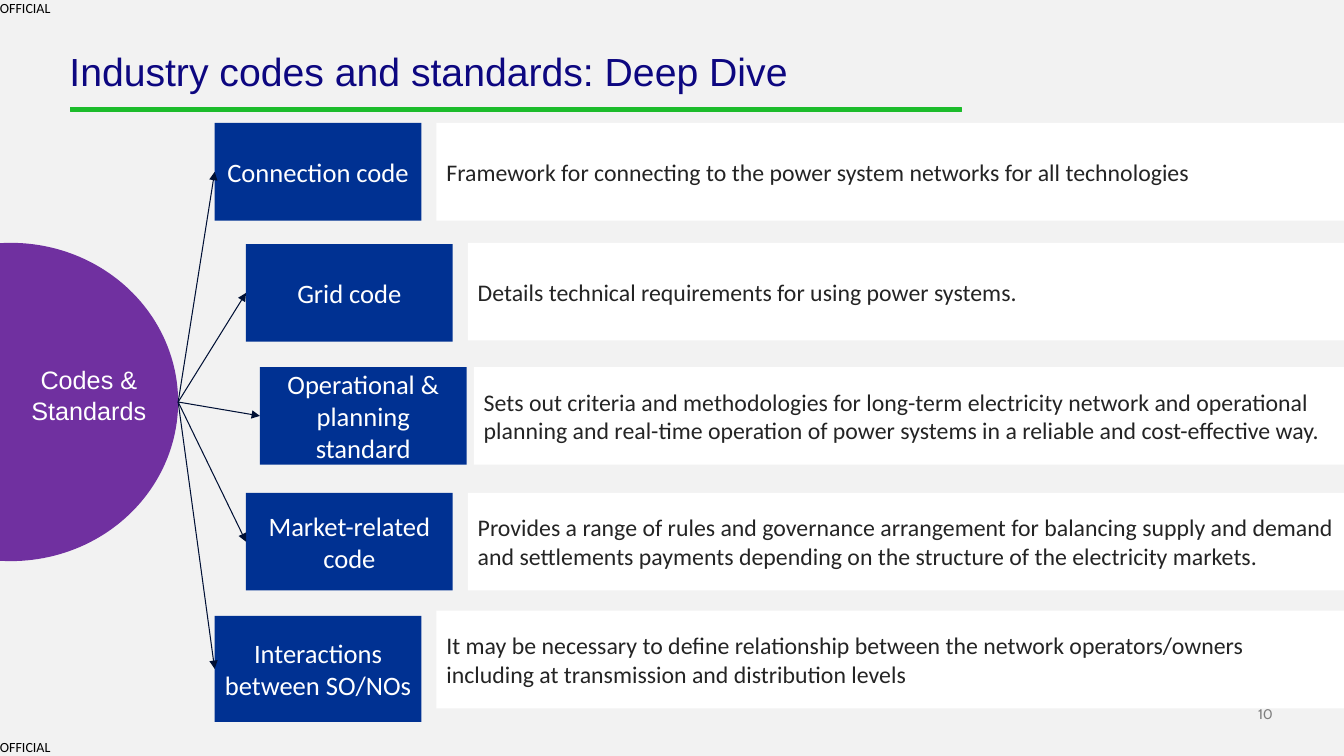
from dataclasses import dataclass

from lxml.etree import SubElement
from pptx import Presentation
from pptx.dml.color import RGBColor
from pptx.enum.shapes import MSO_CONNECTOR, MSO_SHAPE
from pptx.enum.text import MSO_ANCHOR, PP_ALIGN
from pptx.oxml.ns import qn
from pptx.shapes.autoshape import Shape
from pptx.slide import Slide
from pptx.util import Cm, Pt

WIDE, HIGH = 33.87, 19.05
HUB_TIP, HUB_MID = 4.49, 10.13


@dataclass
class Area:
    left: float
    top: float
    width: float
    height: float


@dataclass
class Style:
    font: str
    size: float
    color: str
    align: PP_ALIGN = PP_ALIGN.LEFT
    anchor: MSO_ANCHOR = MSO_ANCHOR.MIDDLE
    side: float = 0.25
    edge: float = 0.13
    wrap: bool = True
    pitch: float = 1.0


@dataclass
class Code:
    name: str
    about: str
    left: float
    top: float
    note_left: float
    note_top: float
    height: float = 2.46


MARK = Style("Calibri", 10, "000000", anchor=MSO_ANCHOR.TOP, side=0, edge=0, wrap=False)
TITLE = Style("Arial", 28, "0D0780", anchor=MSO_ANCHOR.TOP, side=0, edge=0, pitch=0.9)
PAGE = Style("Cabin", 10, "7F7F7F", PP_ALIGN.RIGHT, MSO_ANCHOR.BOTTOM, 0, 0)
HUB = Style("Arial", 18, "FFFFFF", PP_ALIGN.CENTER)
NAME = Style("Calibri", 19, "FFFFFF", PP_ALIGN.CENTER)
NOTE = Style("Calibri", 17, "242424")

CODES = [
    Code("Connection code",
         "Framework for connecting to the power system networks for all technologies",
         5.41, 3.1, 11, 3.1),
    Code("Grid code",
         "Details technical requirements for using power systems.",
         6.2, 6.15, 11.79, 6.12),
    Code("Operational & planning standard",
         "Sets out criteria and methodologies for long-term electricity network and operational "
         "planning and real-time operation of power systems in a reliable and cost-effective way.",
         6.55, 9.25, 11.94, 9.25),
    Code("Market-related code",
         "Provides a range of rules and governance arrangement for balancing supply and demand "
         "and settlements payments depending on the structure of the electricity markets.",
         6.2, 12.42, 11.79, 12.42),
    Code("Interactions between SO/NOs",
         "It may be necessary to define relationship between the network operators/owners "
         "including at transmission and distribution levels",
         5.41, 15.52, 11, 15.39, 2.67),
]


def tint(code: str) -> RGBColor:
    return RGBColor.from_string(code)


def write(shape: Shape, text: str, style: Style) -> None:
    frame = shape.text_frame
    frame.text = text
    frame.word_wrap = style.wrap
    frame.vertical_anchor = style.anchor
    frame.margin_left = frame.margin_right = Cm(style.side)
    frame.margin_top = frame.margin_bottom = Cm(style.edge)
    for para in frame.paragraphs:
        para.alignment = style.align
        para.line_spacing = style.pitch
        for run in para.runs:
            run.font.name = style.font
            run.font.size = Pt(style.size)
            run.font.color.rgb = tint(style.color)


def label(slide: Slide, area: Area, text: str, style: Style) -> None:
    box = slide.shapes.add_textbox(
        Cm(area.left), Cm(area.top), Cm(area.width), Cm(area.height))
    write(box, text, style)


def block(slide: Slide, kind: MSO_SHAPE, area: Area, fill: str) -> Shape:
    shape = slide.shapes.add_shape(
        kind, Cm(area.left), Cm(area.top), Cm(area.width), Cm(area.height))
    shape.shadow.inherit = False
    shape.fill.solid()
    shape.fill.fore_color.rgb = tint(fill)
    shape.line.fill.background()
    return shape


def arrow(slide: Slide, goal: Shape) -> None:
    link = slide.shapes.add_connector(
        MSO_CONNECTOR.STRAIGHT, Cm(HUB_TIP), Cm(HUB_MID), goal.left, goal.top)
    link.end_connect(goal, 1)
    link.line.color.rgb = tint("001035")
    link.line.width = Pt(0.75)
    SubElement(link.line._get_or_add_ln(), qn("a:tailEnd"), type="triangle")
    SubElement(link._element.spPr, qn("a:effectLst"))


def draw(slide: Slide, code: Code) -> None:
    name = block(slide, MSO_SHAPE.RECTANGLE,
                 Area(code.left, code.top, 5.21, code.height), "003192")
    write(name, code.name, NAME)
    note = block(slide, MSO_SHAPE.RECTANGLE,
                 Area(code.note_left, code.note_top, WIDE - code.note_left, 2.46), "FFFFFF")
    write(note, code.about, NOTE)
    arrow(slide, name)


def main() -> None:
    deck = Presentation()
    deck.slide_width, deck.slide_height = Cm(WIDE), Cm(HIGH)
    slide = deck.slides.add_slide(deck.slide_layouts[6])
    slide.background.fill.solid()
    slide.background.fill.fore_color.rgb = tint("F2F2F2")

    label(slide, Area(31.01, 17.78, 1.07, 0.43), "10", PAGE)
    for top in (0, 18.62):
        label(slide, Area(0, top, 1.35, 0.43), "OFFICIAL", MARK)
    bar = block(slide, MSO_SHAPE.RECTANGLE, Area(1.78, 2.72, 22.45, 0.1), "1CBC2B")
    bar.line.color.rgb = tint("1CBC2B")
    bar.line.width = Pt(0.75)
    label(slide, Area(1.75, 1.32, 23.7, 1.07), "Industry codes and standards: Deep Dive", TITLE)

    block(slide, MSO_SHAPE.OVAL, Area(HUB_TIP - 8.43, HUB_MID - 4.01, 8.43, 8.02), "7030A0")
    for code in CODES:
        draw(slide, code)
    label(slide, Area(0.46, 8.2, 3.56, 3.5), "Codes & Standards", HUB)

    deck.save("out.pptx")


if __name__ == "__main__":
    main()
